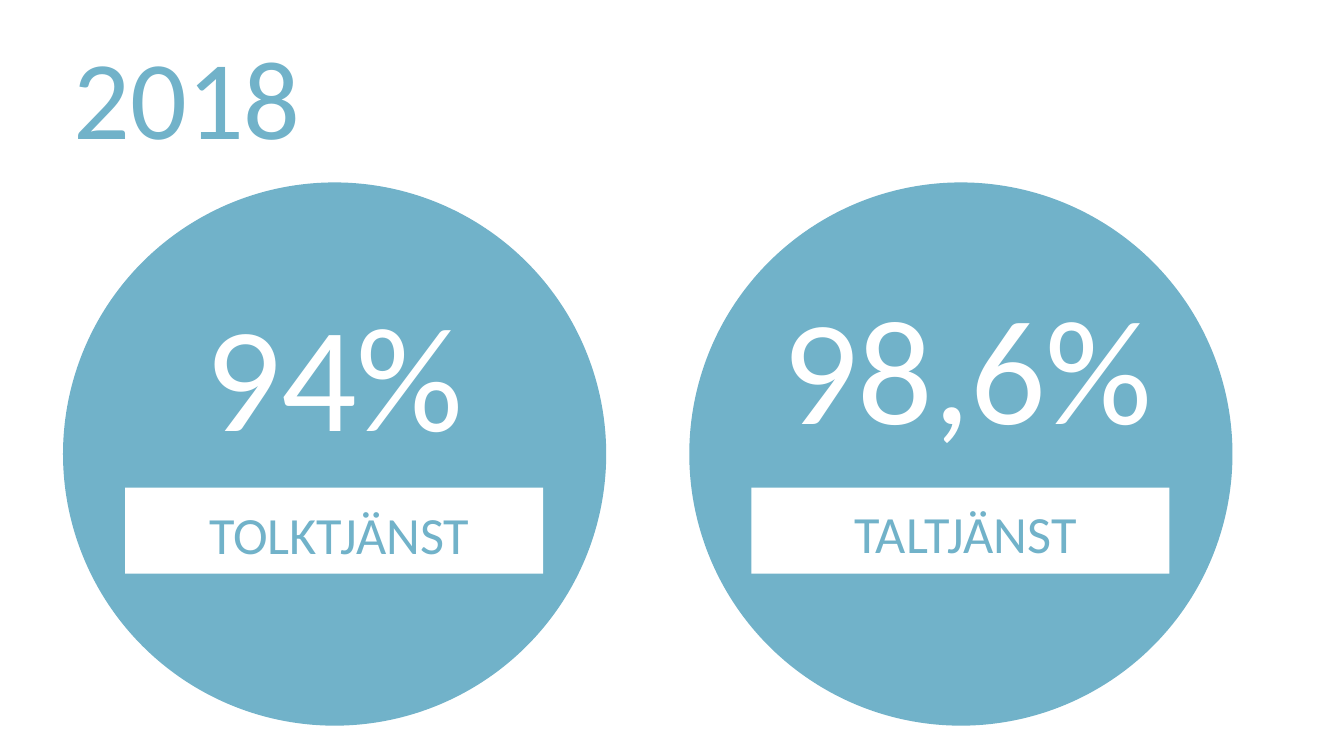
import pptx
import pptx.dml.color
import pptx.enum.shapes
import pptx.enum.text
import pptx.util

Pt = pptx.util.Pt
SHAPE = pptx.enum.shapes.MSO_SHAPE
ALIGN = pptx.enum.text.PP_ALIGN
ANCHOR = pptx.enum.text.MSO_ANCHOR
BLUE = pptx.dml.color.RGBColor(0x71, 0xB2, 0xC9)
WHITE = pptx.dml.color.RGBColor(0xFF, 0xFF, 0xFF)


def add_filled(slide, kind, left, top, width, height, color, outline=0):
    """Add a plain filled shape, outlined in its own colour if asked."""
    figure = slide.shapes.add_shape(kind, Pt(left), Pt(top), Pt(width), Pt(height))
    figure.shadow.inherit = False
    figure.fill.solid()
    figure.fill.fore_color.rgb = color
    if outline:
        figure.line.color.rgb = color
        figure.line.width = Pt(outline)
    else:
        figure.line.fill.background()


def add_text(slide, wording, left, top, width, height, size, color, align=ALIGN.CENTER):
    """Add a one-line text box and return its text frame."""
    box = slide.shapes.add_textbox(Pt(left), Pt(top), Pt(width), Pt(height))
    frame = box.text_frame
    frame.word_wrap = True
    line = frame.paragraphs[0]
    line.text = wording
    line.alignment = align
    line.font.name = "Calibri"
    line.font.size = Pt(size)
    line.font.color.rgb = color
    return frame


def add_title(slide, wording):
    """Add the slide heading without insets, centred vertically."""
    frame = add_text(slide, wording, 39.6, 14.4, 635.8, 81.4, 60, BLUE, ALIGN.LEFT)
    frame.margin_left = frame.margin_right = frame.margin_top = frame.margin_bottom = 0
    frame.vertical_anchor = ANCHOR.MIDDLE
    frame.paragraphs[0].line_spacing = 0.9


def add_result(slide, left, share, service, share_left, share_top, service_top):
    """Add a circle with a percentage above a labelled band."""
    add_filled(slide, SHAPE.OVAL, left, 100, 286.5, 286.5, BLUE, 4.5)
    add_text(slide, share, share_left, share_top, 318.2, 104.4, 80, WHITE)
    add_filled(slide, SHAPE.RECTANGLE, left + 31, 261.3, 224, 46, WHITE)
    add_text(slide, service, left + 53.3, service_top, 185, 41, 28, BLUE)


def main():
    """Build and save the slide."""
    deck = pptx.Presentation()
    deck.slide_width, deck.slide_height = Pt(720), Pt(405)
    slide = deck.slides.add_slide(deck.slide_layouts[6])
    add_result(slide, 36, "94%", "TOLKTJÄNST", 20.2, 147.6, 265.7)
    add_result(slide, 371.5, "98,6%", "TALTJÄNST", 359.3, 144, 265)
    add_title(slide, "2018")
    deck.save("out.pptx")


if __name__ == "__main__":
    main()
